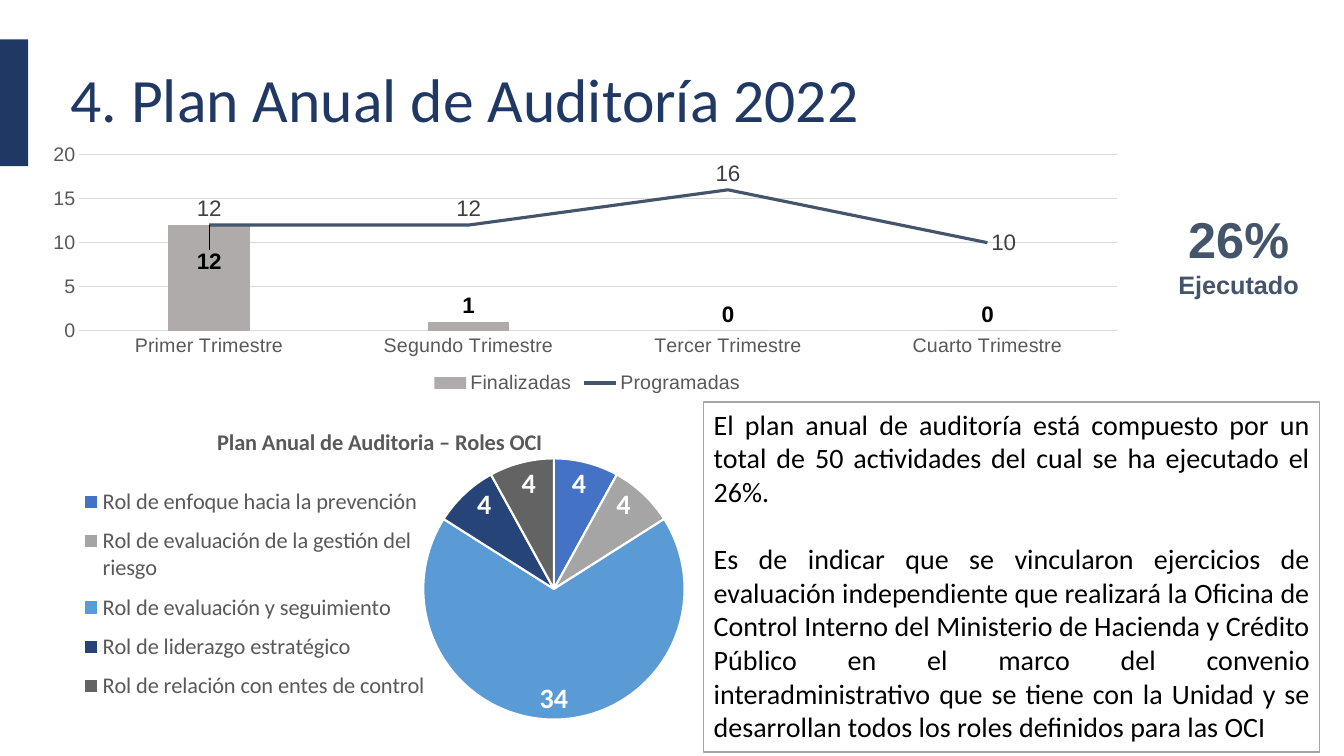
from lxml import etree
from pptx import Presentation
from pptx.chart.data import CategoryChartData
from pptx.dml.color import RGBColor
from pptx.enum.chart import XL_CHART_TYPE, XL_LABEL_POSITION, XL_LEGEND_POSITION, XL_TICK_MARK
from pptx.enum.shapes import MSO_SHAPE
from pptx.enum.text import MSO_ANCHOR, MSO_AUTO_SIZE, PP_ALIGN
from pptx.oxml.ns import qn
from pptx.util import Pt

PX = 9144  # 100 px to the inch
LEFT, CENTER, JUSTIFY = PP_ALIGN.LEFT, PP_ALIGN.CENTER, PP_ALIGN.JUSTIFY
RECT = MSO_SHAPE.RECTANGLE
COLUMN, PIE = XL_CHART_TYPE.COLUMN_CLUSTERED, XL_CHART_TYPE.PIE
ABOVE, RIGHT = XL_LABEL_POSITION.ABOVE, XL_LABEL_POSITION.RIGHT
OUTSIDE, INSIDE = XL_LABEL_POSITION.OUTSIDE_END, XL_LABEL_POSITION.INSIDE_END
BEST_FIT = XL_LABEL_POSITION.BEST_FIT
BOTTOM, LEGEND_LEFT = XL_LEGEND_POSITION.BOTTOM, XL_LEGEND_POSITION.LEFT
NO_TICK = XL_TICK_MARK.NONE
COLORS = {
    "navy": "203864", "slate": "44546A", "bar": "AFABAB", "grid": "D9D9D9",
    "axis": "595959", "label": "404040", "black": "000000", "white": "FFFFFF",
    "border": "A5A5A5",
}
ROLES = [
    ("Rol de enfoque hacia la prevención", 4, "4472C4"),
    ("Rol de evaluación de la gestión del riesgo", 4, "A5A5A5"),
    ("Rol de evaluación y seguimiento", 34, "5B9BD5"),
    ("Rol de liderazgo estratégico", 4, "264478"),
    ("Rol de relación con entes de control", 4, "636363"),
]


def rgb(color):
    return RGBColor.from_string(COLORS.get(color, color))


def style_font(font, size, color, name="Arial", bold=False):
    font.size, font.name, font.bold = Pt(size), name, bold
    font.color.rgb = rgb(color)


def write(tf, text, first=False, align=LEFT, before=0, spacing=None, **font):
    p = tf.paragraphs[0] if first else tf.add_paragraph()
    p.alignment = align
    if before:
        p.space_before = Pt(before)
    if spacing:
        p.line_spacing = spacing
    r = p.add_run()
    r.text = text
    style_font(r.font, **font)


def sub(parent, tag, val=None):
    child = etree.SubElement(parent, qn(f"c:{tag}"))
    if val is not None:
        child.set("val", str(val))
    return child


def set_layout(element, after, **values):
    """Place a chart part by fractions, right after its child called after."""
    for old in element.findall(qn("c:layout")):
        element.remove(old)
    layout = etree.Element(qn("c:layout"))
    manual = sub(layout, "manualLayout")
    for tag, val in values.items():
        sub(manual, tag, val)
    previous = element.find(qn(f"c:{after}")) if after else None
    if previous is None:
        element.insert(0, layout)
    else:
        previous.addnext(layout)


def move_to_line(chart, series):
    """Draw a column series as a line on the same axes."""
    bar = chart._chartSpace.find(f".//{qn('c:barChart')}")
    ser = series._element
    for old in ser.findall(qn("c:invertIfNegative")):
        ser.remove(old)
    marker = etree.Element(qn("c:marker"))
    sub(marker, "symbol", "none")
    ser.find(qn("c:spPr")).addnext(marker)
    sub(ser, "smooth", 0)
    line = etree.Element(qn("c:lineChart"))
    sub(line, "grouping", "standard")
    sub(line, "varyColors", 0)
    line.append(ser)
    sub(line, "marker", 1)
    for axis in bar.findall(qn("c:axId")):
        sub(line, "axId", axis.get("val"))
    bar.addnext(line)


class Slide:
    def __init__(self, prs):
        self.s = prs.slides.add_slide(prs.slide_layouts[5])

    def place(self, sp, box):
        sp.left, sp.top, sp.width, sp.height = (v * PX for v in box)

    def title(self, box, text):
        sp = self.s.shapes.title
        self.place(sp, box)
        tf = sp.text_frame
        tf.word_wrap, tf.auto_size = True, MSO_AUTO_SIZE.NONE
        tf.vertical_anchor = MSO_ANCHOR.MIDDLE
        write(tf, text, first=True, spacing=0.9, size=44, color="navy", name="Calibri")

    def rect(self, box, fill, line=None):
        sp = self.s.shapes.add_shape(RECT, *(v * PX for v in box))
        sp.shadow.inherit = False
        sp.fill.solid()
        sp.fill.fore_color.rgb = rgb(fill)
        if line:
            sp.line.color.rgb = rgb(line)
            sp.line.width = Pt(1)
        else:
            sp.line.fill.background()
        tf = sp.text_frame
        tf.word_wrap, tf.vertical_anchor = True, MSO_ANCHOR.TOP
        return tf

    def text(self, box):
        tf = self.s.shapes.add_textbox(*(v * PX for v in box)).text_frame
        tf.word_wrap = False
        return tf

    def chart(self, kind, box, data, legend, legend_size, name):
        frame = self.s.shapes.add_chart(kind, *(v * PX for v in box), data)
        chart = frame.chart
        style_font(chart.font, 14, "axis", name)
        chart.has_legend = True
        chart.legend.position = legend
        chart.legend.include_in_layout = False
        style_font(chart.legend.font, legend_size, "axis", name)
        return chart

    def labels(self, series, position, **font):
        labels = series.data_labels
        labels.show_value, labels.position = True, position
        style_font(labels.font, **font)

    def point_label(self, series, index, position, **font):
        label = series.points[index].data_label
        style_font(label.font, **font)
        label.position = position

    def axis(self, axis):
        axis.major_tick_mark = axis.minor_tick_mark = NO_TICK
        style_font(axis.tick_labels.font, 14, "axis")

    def quarters(self, box):
        data = CategoryChartData()
        data.categories = [f"{n} Trimestre" for n in ("Primer", "Segundo", "Tercer", "Cuarto")]
        data.add_series("Finalizadas", (12, 1, 0, 0))
        data.add_series("Programadas", (12, 12, 16, 10))
        chart = self.chart(COLUMN, box, data, BOTTOM, 14, "Arial")
        chart.has_title = False
        plot = chart.plots[0]
        plot.gap_width, plot.vary_by_categories = 219, False
        done, planned = plot.series
        # Axes
        cat, val = chart.category_axis, chart.value_axis
        self.axis(cat)
        self.axis(val)
        val.minimum_scale, val.maximum_scale, val.major_unit = 0, 20, 5
        val.format.line.fill.background()
        for line in (cat.format.line, val.major_gridlines.format.line):
            line.color.rgb = rgb("grid")
            line.width = Pt(0.75)
        # Series and labels
        done.format.fill.solid()
        done.format.fill.fore_color.rgb = rgb("bar")
        planned.format.line.color.rgb = rgb("slate")
        planned.format.line.width = Pt(2.25)
        bold = dict(size=16, color="black", bold=True)
        self.labels(done, OUTSIDE, **bold)
        self.point_label(done, 0, INSIDE, **bold)
        set_layout(done._element.find(f".//{qn('c:dLbl')}"), "idx", x=0, y=0.08)
        plain = dict(size=16, color="label")
        self.labels(planned, ABOVE, **plain)
        self.point_label(planned, 3, RIGHT, **plain)
        move_to_line(chart, planned)
        set_layout(chart._chartSpace.find(f".//{qn('c:plotArea')}"), None, layoutTarget="inner",
                   xMode="edge", yMode="edge", x=0.04, y=0.06, w=0.94, h=0.68)

    def roles(self, box):
        names, values, fills = zip(*ROLES)
        data = CategoryChartData()
        data.categories = names
        data.add_series("Series 1", values)
        chart = self.chart(PIE, box, data, LEGEND_LEFT, 16, "Calibri")
        chart.has_title = True
        title = chart.chart_title
        write(title.text_frame, "Plan Anual de Auditoria – Roles OCI", first=True,
              align=CENTER, size=16, color="axis", name="Calibri", bold=True)
        series = chart.plots[0].series[0]
        for i, fill in enumerate(fills):
            fmt = series.points[i].format
            fmt.fill.solid()
            fmt.fill.fore_color.rgb = rgb(fill)
            fmt.line.color.rgb = rgb("white")
            fmt.line.width = Pt(1.5)
        self.labels(series, BEST_FIT, size=20, color="white", name="Calibri", bold=True)
        edge = dict(xMode="edge", yMode="edge")
        set_layout(title._element, "tx", **edge, x=0.23, y=0.06)
        set_layout(chart.legend._element, "legendPos", **edge, x=0.02, y=0.22, w=0.55, h=0.7)
        set_layout(chart._chartSpace.find(f".//{qn('c:plotArea')}"), None, layoutTarget="inner",
                   **edge, x=0.56, y=0.16, w=0.41, h=0.79)


def main():
    prs = Presentation()
    prs.slide_width, prs.slide_height = 1333 * PX, 750 * PX
    slide = Slide(prs)

    # Heading
    slide.rect((0, 39, 28, 126), "navy")
    slide.title((60, 69, 814, 66), "4. Plan Anual de Auditoría 2022")

    # Quarterly progress
    slide.quarters((35, 138, 1095, 257))
    tf = slide.text((1158, 202, 141, 101))
    write(tf, "26%", first=True, align=CENTER, size=36, color="slate", bold=True)
    write(tf, "Ejecutado", align=CENTER, size=18, color="slate", bold=True)

    # Roles and summary
    slide.roles((66, 399, 632, 334))
    tf = slide.rect((698, 399, 611, 347), "white", "border")
    body = dict(align=JUSTIFY, size=20, color="black", name="Calibri")
    write(tf, "El plan anual de auditoría está compuesto por un total de 50 actividades "
          "del cual se ha ejecutado el 26%.", first=True, **body)
    write(tf, "Es de indicar que se vincularon ejercicios de evaluación independiente que "
          "realizará la Oficina de Control Interno del Ministerio de Hacienda y Crédito Público "
          "en el marco del convenio interadministrativo que se tiene con la Unidad y se "
          "desarrollan todos los roles definidos para las OCI", before=24, **body)
    prs.save("out.pptx")


if __name__ == "__main__":
    main()
